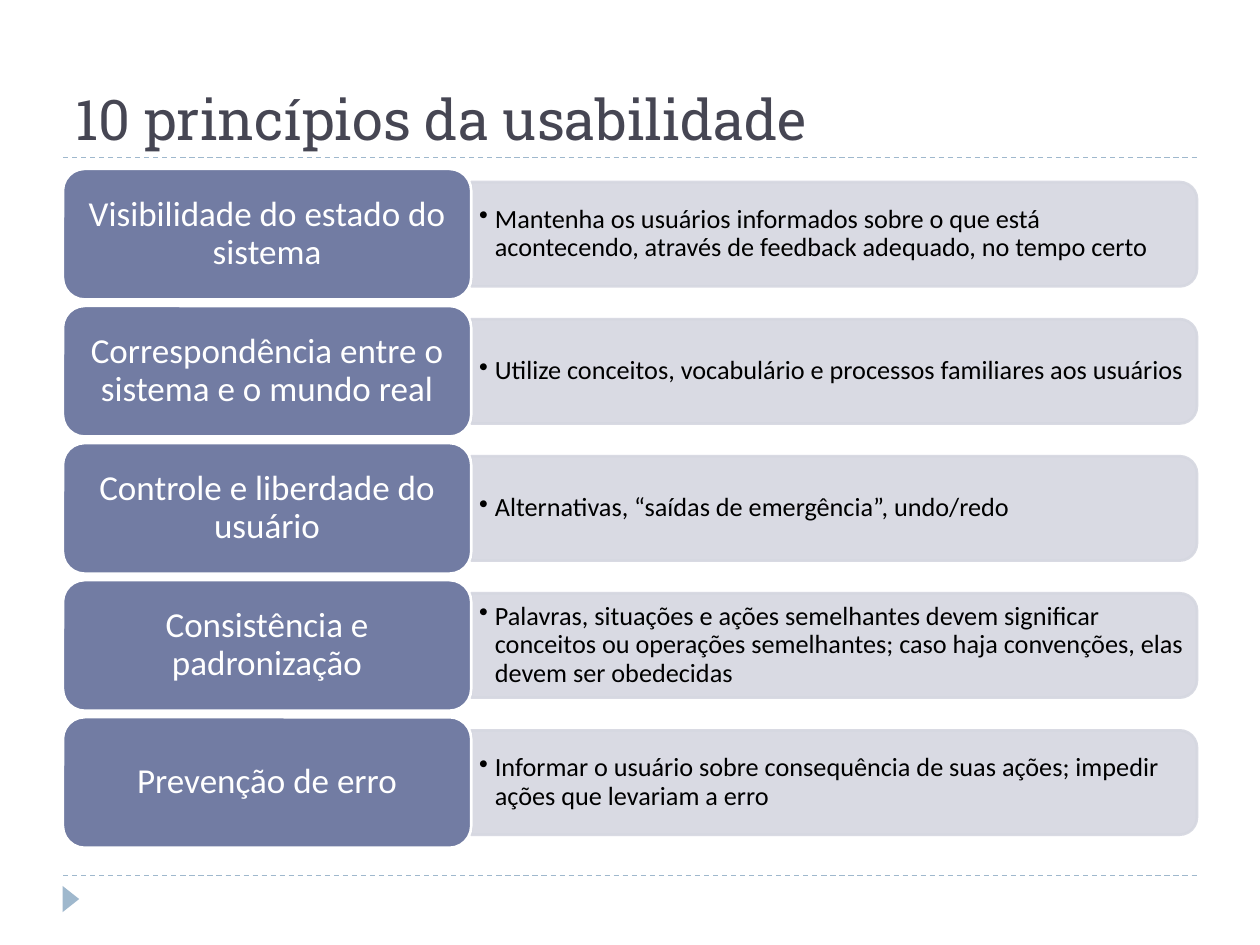
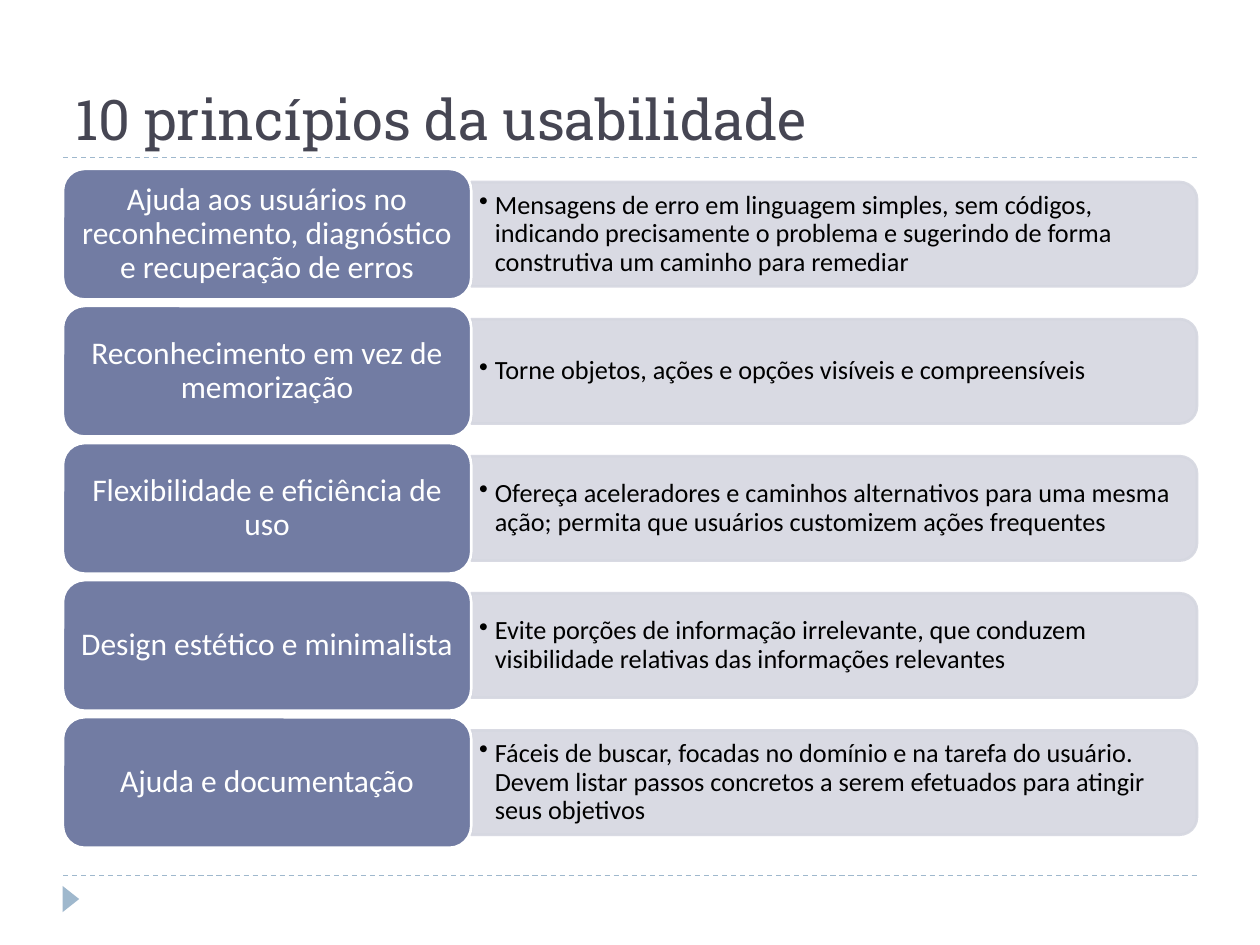
from lxml.etree import SubElement
from pptx import Presentation
from pptx.dml.color import RGBColor
from pptx.enum.dml import MSO_LINE
from pptx.enum.shapes import MSO_CONNECTOR, MSO_SHAPE
from pptx.enum.text import MSO_ANCHOR, PP_ALIGN
from pptx.oxml.ns import qn
from pptx.util import Pt

# Content
TITLE = "10 princípios da usabilidade"
SLIDES = [
    {"label_size": 20, "principles": [
        ("Visibilidade do estado do sistema",
         "Mantenha os usuários informados sobre o que está acontecendo, "
         "através de feedback adequado, no tempo certo"),
        ("Correspondência entre o sistema e o mundo real",
         "Utilize conceitos, vocabulário e processos familiares aos usuários"),
        ("Controle e liberdade do usuário",
         "Alternativas, “saídas de emergência”, undo/redo"),
        ("Consistência e padronização",
         "Palavras, situações e ações semelhantes devem significar conceitos ou "
         "operações semelhantes; caso haja convenções, elas devem ser obedecidas"),
        ("Prevenção de erro",
         "Informar o usuário sobre consequência de suas ações; "
         "impedir ações que levariam a erro"),
    ]},
    {"label_size": 18, "principles": [
        ("Ajuda aos usuários no reconhecimento, diagnóstico e recuperação de erros",
         "Mensagens de erro em linguagem simples, sem códigos, indicando "
         "precisamente o problema e sugerindo de forma construtiva um caminho "
         "para remediar"),
        ("Reconhecimento em vez de memorização",
         "Torne objetos, ações e opções visíveis e compreensíveis"),
        ("Flexibilidade e eficiência de uso",
         "Ofereça aceleradores e caminhos alternativos para uma mesma ação; "
         "permita que usuários customizem ações frequentes"),
        ("Design estético e minimalista",
         "Evite porções de informação irrelevante, que conduzem visibilidade "
         "relativas das informações relevantes"),
        ("Ajuda e documentação",
         "Fáceis de buscar, focadas no domínio e na tarefa do usuário. Devem "
         "listar passos concretos a serem efetuados para atingir seus objetivos"),
    ]},
]

# Style
COLORS = {"title": "464653", "rule": "9FB8CD", "label": "727CA3",
          "bar": "D5D7E0", "white": "FFFFFF", "text": "000000"}
TITLE_FONT, BODY_FONT = "Roboto Slab", "Calibri"
DETAIL_SIZE = 15
BULLET_INDENT = 9

# Geometry, in points
MARGIN, CONTENT_WIDTH = 36, 648
TITLE_TOP, TITLE_HEIGHT = 12.25, 77.75
RULES = (500.4, TITLE_TOP + TITLE_HEIGHT)
ROWS_TOP, LABEL_HEIGHT = 96.55, 74.6
ROW_PITCH = LABEL_HEIGHT * 1.05
LABEL_WIDTH = CONTENT_WIDTH * 0.36
BAR_LEFT, BAR_WIDTH = MARGIN + LABEL_WIDTH, CONTENT_WIDTH - LABEL_WIDTH
BAR_HEIGHT = LABEL_HEIGHT * 0.8
DETAIL_WIDTH, DETAIL_HEIGHT = BAR_WIDTH - 2.9, 54


def color(name):
    return RGBColor.from_string(COLORS[name])


def add_filled_shape(slide, kind, box, fill, line=None):
    shape = slide.shapes.add_shape(kind, *map(Pt, box))
    shape.shadow.inherit = False
    shape.fill.solid()
    shape.fill.fore_color.rgb = color(fill)
    if line:
        shape.line.color.rgb = color(line)
        shape.line.width = Pt(1.5)
    else:
        shape.line.fill.background()
    return shape


def write(shape, text, font, size, color_name, anchor=MSO_ANCHOR.MIDDLE):
    frame = shape.text_frame
    frame.word_wrap = True
    frame.vertical_anchor = anchor
    paragraph = frame.paragraphs[0]
    paragraph.text = text
    paragraph.font.name = font
    paragraph.font.size = Pt(size)
    paragraph.font.color.rgb = color(color_name)
    return paragraph


def set_tight_spacing(shape, paragraph, size):
    """Insets grow with the text size."""
    frame = shape.text_frame
    frame.margin_left = frame.margin_right = Pt(size * 0.3)
    frame.margin_top = frame.margin_bottom = Pt(size * 0.15)
    paragraph.line_spacing = 0.9


def add_bullet(paragraph):
    properties = paragraph._p.get_or_add_pPr()
    properties.set("marL", str(Pt(BULLET_INDENT)))
    properties.set("indent", str(-Pt(BULLET_INDENT)))
    SubElement(properties, qn("a:buChar")).set("char", "•")


def add_frame(slide):
    # Dashed rules and corner marker
    for y in RULES:
        rule = slide.shapes.add_connector(
            MSO_CONNECTOR.STRAIGHT, Pt(MARGIN), Pt(y),
            Pt(MARGIN + CONTENT_WIDTH), Pt(y))
        rule.line.color.rgb = color("rule")
        rule.line.width = Pt(0.75)
        rule.line.dash_style = MSO_LINE.DASH
        SubElement(rule._element.spPr, qn("a:effectLst"))
    marker = add_filled_shape(slide, MSO_SHAPE.ISOSCELES_TRIANGLE,
                              (33, 509, 15, 9.5), "rule")
    marker.rotation = 90

    # Title
    title = slide.shapes.add_textbox(Pt(MARGIN), Pt(TITLE_TOP),
                                     Pt(CONTENT_WIDTH), Pt(TITLE_HEIGHT))
    write(title, TITLE, TITLE_FONT, 32, "title", MSO_ANCHOR.BOTTOM)


def add_principle(slide, top, label_text, detail_text, label_size):
    middle = top + LABEL_HEIGHT / 2

    # Bar: an upright shape turned so that its round corners face right
    center = BAR_LEFT + BAR_WIDTH / 2
    bar = add_filled_shape(
        slide, MSO_SHAPE.ROUND_2_SAME_RECTANGLE,
        (center - BAR_HEIGHT / 2, middle - BAR_WIDTH / 2, BAR_HEIGHT, BAR_WIDTH),
        "bar", "bar")
    bar.rotation = 90
    for paint in bar._element.spPr.iter(qn("a:srgbClr")):
        SubElement(paint, qn("a:alpha")).set("val", "90000")

    # Explanation
    detail = slide.shapes.add_textbox(
        Pt(BAR_LEFT), Pt(middle - DETAIL_HEIGHT / 2),
        Pt(DETAIL_WIDTH), Pt(DETAIL_HEIGHT))
    paragraph = write(detail, detail_text, BODY_FONT, DETAIL_SIZE, "text")
    set_tight_spacing(detail, paragraph, DETAIL_SIZE)
    add_bullet(paragraph)

    # Label
    label = add_filled_shape(slide, MSO_SHAPE.ROUNDED_RECTANGLE,
                             (MARGIN, top, LABEL_WIDTH, LABEL_HEIGHT),
                             "label", "white")
    paragraph = write(label, label_text, BODY_FONT, label_size, "white")
    set_tight_spacing(label, paragraph, label_size)
    paragraph.alignment = PP_ALIGN.CENTER


def main():
    presentation = Presentation()
    presentation.slide_width, presentation.slide_height = Pt(720), Pt(540)
    for content in SLIDES:
        slide = presentation.slides.add_slide(presentation.slide_layouts[6])
        add_frame(slide)
        for row, (label, detail) in enumerate(content["principles"]):
            add_principle(slide, ROWS_TOP + row * ROW_PITCH, label, detail,
                          content["label_size"])
    presentation.save("out.pptx")


if __name__ == "__main__":
    main()
